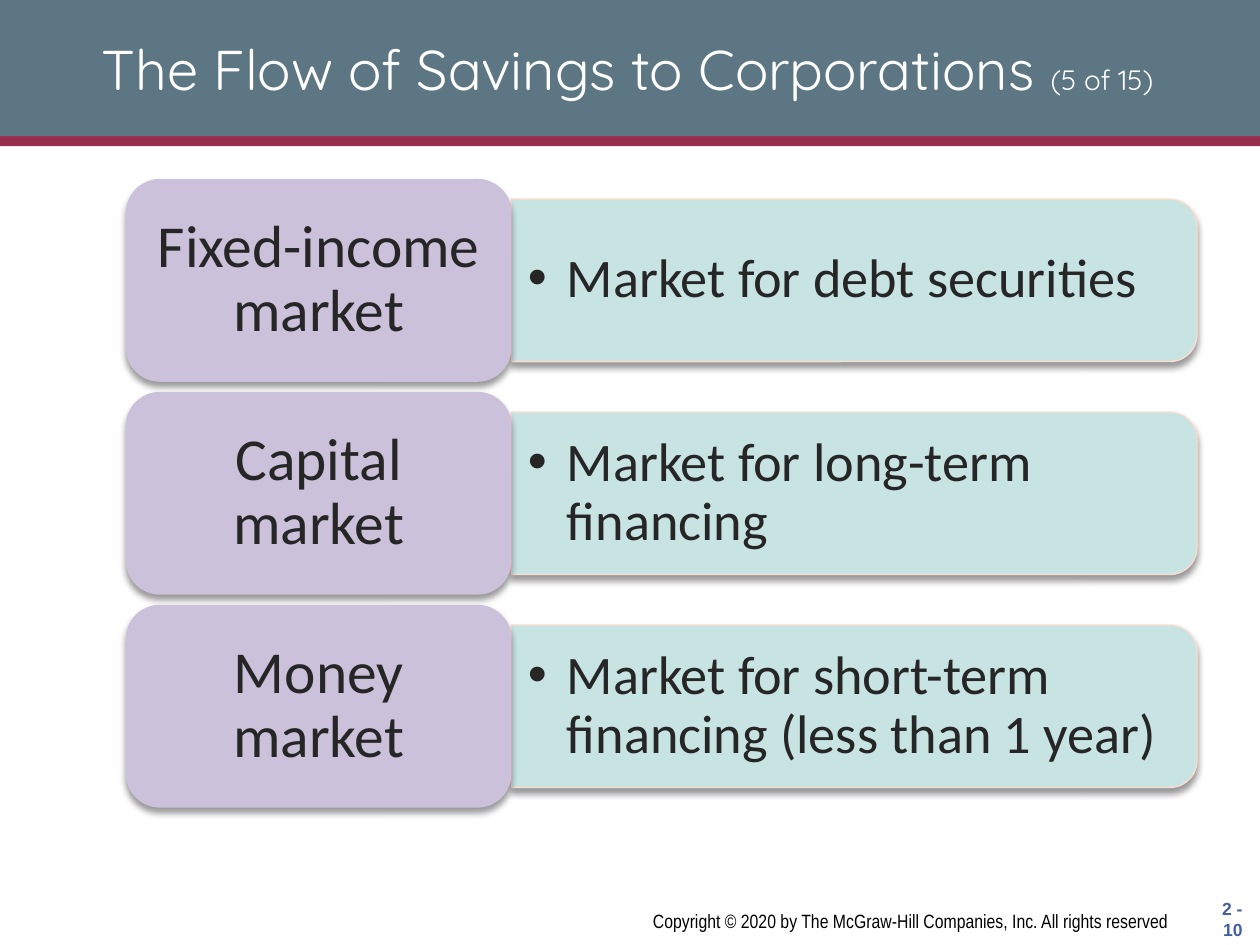
from lxml import etree
from pptx import Presentation
from pptx.dml.color import RGBColor
from pptx.enum.shapes import MSO_SHAPE
from pptx.enum.text import MSO_ANCHOR, PP_ALIGN
from pptx.oxml.ns import qn
from pptx.util import Inches, Pt

RECT = MSO_SHAPE.RECTANGLE
ROUND = MSO_SHAPE.ROUNDED_RECTANGLE
ROUND_TOP = MSO_SHAPE.ROUND_2_SAME_RECTANGLE
LEFT, CENTER, RIGHT = PP_ALIGN.LEFT, PP_ALIGN.CENTER, PP_ALIGN.RIGHT
TOP, MIDDLE = MSO_ANCHOR.TOP, MSO_ANCHOR.MIDDLE

ROWS = [
    ("Fixed-income market", "Market for debt securities"),
    ("Capital market", "Market for long-term financing"),
    ("Money market", "Market for short-term financing (less than 1 year)"),
]
ROW_TOP, ROW_PITCH = 1.42, 1.69
LABEL_LEFT, LABEL_W, LABEL_H = 1, 3.06, 1.61
BAR_W, BAR_H = 5.44, 1.29


def color(value):
    return RGBColor.from_string(value)


def add_shadow(sp):
    """Give the shape a soft shadow straight below it."""
    effects = etree.SubElement(sp._element.spPr, qn("a:effectLst"))
    shadow = etree.SubElement(effects, qn("a:outerShdw"), blurRad=str(Pt(4)),
                              dist=str(Pt(3)), dir="5400000", rotWithShape="0")
    black = etree.SubElement(shadow, qn("a:srgbClr"), val="000000")
    etree.SubElement(black, qn("a:alpha"), val="40000")


def add_bullet(p, indent):
    pPr = p._p.get_or_add_pPr()
    pPr.set("marL", str(Inches(indent)))
    pPr.set("indent", str(-Inches(indent)))
    etree.SubElement(pPr, qn("a:buFont"), typeface="Arial")
    etree.SubElement(pPr, qn("a:buChar"), char="•")


def write(sp, *runs, font="Calibri", ink="262626", bold=False, align=LEFT,
          anchor=MIDDLE, insets=(0.1, 0.05), spacing=None, indent=None, wrap=True):
    """Fill the shape with one paragraph of (text, size) runs."""
    tf = sp.text_frame
    tf.word_wrap = wrap
    tf.vertical_anchor = anchor
    tf.margin_left = tf.margin_right = Inches(insets[0])
    tf.margin_top = tf.margin_bottom = Inches(insets[1])
    p = tf.paragraphs[0]
    p.alignment = align
    if spacing:
        p.line_spacing = spacing
    if indent:
        add_bullet(p, indent)
    for text, size in runs:
        r = p.add_run()
        r.text = text
        r.font.name = font
        r.font.size = Pt(size)
        r.font.bold = bold
        r.font.color.rgb = color(ink)


class Deck:
    header, accent = "5C7683", "992D4F"
    label_fill, bar_fill, bar_line = "CCC1DA", "C7E3E2", "FCDDCF"

    def __init__(self, prs):
        self.slide = prs.slides.add_slide(prs.slide_layouts[6])

    def shape(self, kind, x, y, w, h, fill, line=None, shadow=False):
        sp = self.slide.shapes.add_shape(kind, Inches(x), Inches(y), Inches(w), Inches(h))
        sp.fill.solid()
        sp.fill.fore_color.rgb = color(fill)
        if line:
            sp.line.color.rgb = color(line)
            sp.line.width = Pt(0.75)
        else:
            sp.line.fill.background()
        if shadow:
            add_shadow(sp)
        else:
            sp.shadow.inherit = False
        return sp

    def text(self, x, y, w, h, *runs, **style):
        box = self.slide.shapes.add_textbox(Inches(x), Inches(y), Inches(w), Inches(h))
        write(box, *runs, **style)

    def market_row(self, top, label, description):
        bar_left = LABEL_LEFT + LABEL_W
        middle = top + LABEL_H / 2
        # The bar is drawn upright, then turned so its rounded end faces right.
        bar = self.shape(ROUND_TOP, bar_left + (BAR_W - BAR_H) / 2, middle - BAR_W / 2,
                         BAR_H, BAR_W, self.bar_fill, self.bar_line, shadow=True)
        bar.rotation = 90
        self.text(bar_left, middle - 0.58, 5.38, 1.16, (description, 31),
                  insets=(0.13, 0.06), spacing=0.9, indent=0.31)
        name = self.shape(ROUND, LABEL_LEFT, top, LABEL_W, LABEL_H,
                          self.label_fill, shadow=True)
        write(name, (label, 34), align=CENTER, insets=(0.14, 0.07), spacing=0.9)


def main():
    prs = Presentation()
    prs.slide_width, prs.slide_height = Inches(10), Inches(7.5)
    deck = Deck(prs)
    deck.shape(RECT, 0, 1.08, 10, 0.08, deck.accent)
    deck.shape(RECT, 0, 0, 10, 1.08, deck.header)
    deck.text(0.25, 0.08, 9.46, 0.92, ("The Flow of Savings to Corporations ", 32),
              ("(5 of 15)", 16), font="Quicksand", ink="FFFFFF", align=CENTER)
    for i, (label, description) in enumerate(ROWS):
        deck.market_row(ROW_TOP + i * ROW_PITCH, label, description)
    deck.text(3.58, 7.17, 5.83, 0.29,
              ("Copyright © 2020 by The McGraw-Hill Companies, Inc. All rights reserved ", 11),
              font="Arial Narrow", ink="000000", align=RIGHT, anchor=TOP)
    deck.text(9.46, 7.08, 0.5, 0.42, ("2 - 10", 10), font="Arial", ink="455EA0",
              bold=True, align=RIGHT, wrap=False)
    prs.save("out.pptx")


if __name__ == "__main__":
    main()
